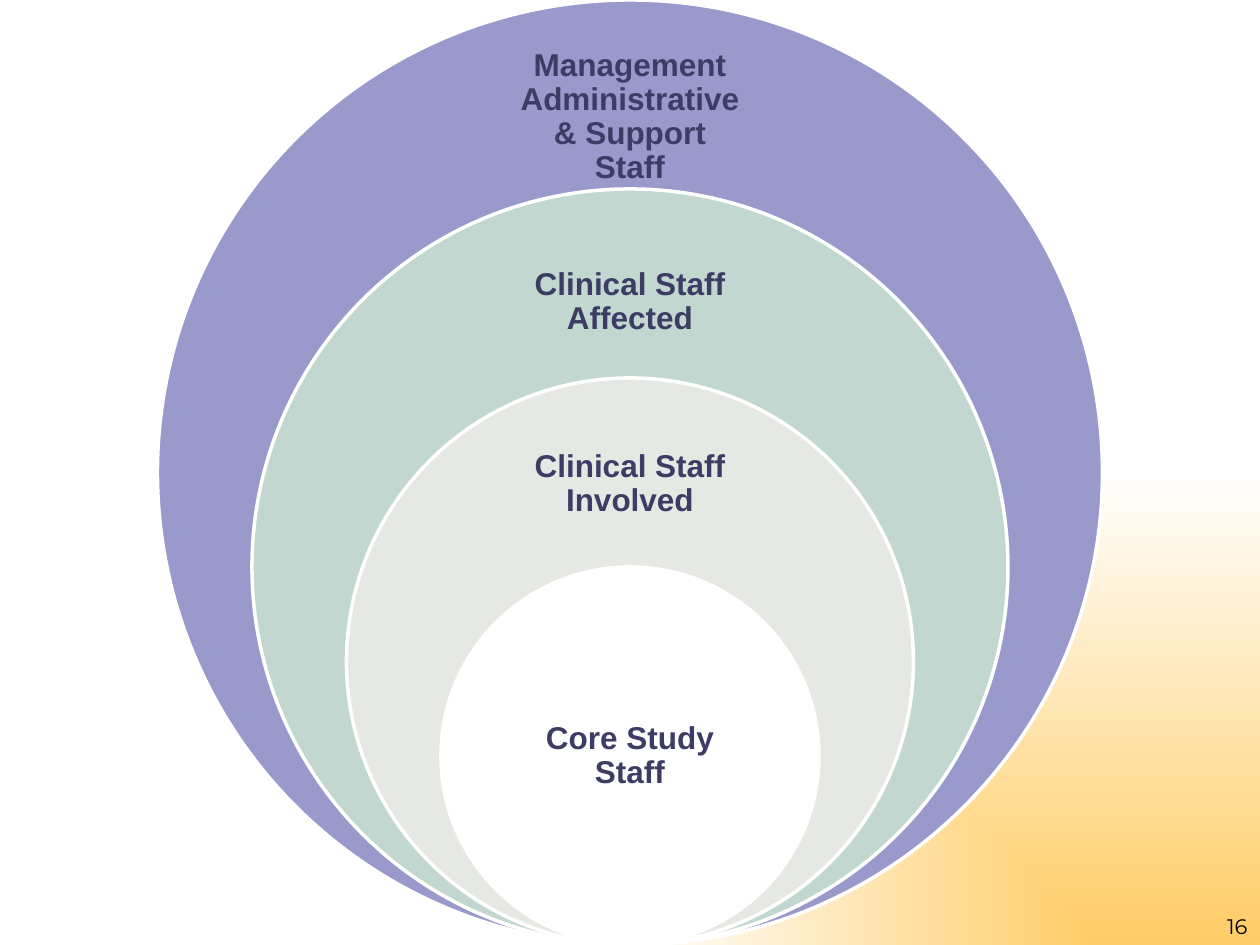
import pptx
import pptx.dml.color
import pptx.enum.shapes
import pptx.enum.text
import pptx.oxml
import pptx.oxml.ns
import pptx.util
from lxml import etree

# Content: rings from the outside in, with label top and height in inches
RINGS = [
    ("Management Administrative & Support Staff", "lilac", 0.37, 1.12),
    ("Clinical Staff Affected", "sage", 1.86, 1.08),
    ("Clinical Staff Involved", "stone", 3.34, 1.01),
    ("Core Study Staff", "white", 5.25, 1.5),
]
PAGE_NUMBER = "16"
COLORS = {"lilac": "9999CC", "sage": "C1D7D0", "stone": "E6E8E3",
          "white": "FFFFFF", "amber": "FFCC66", "ink": "3C3C65",
          "black": "000000"}

# Grid: each ring is a fifth of the slide height smaller than the last
W, H = 10, 7.5
STEP = H / 5
LABEL_W = 2.1
INSET = 0.14

ALIGN = pptx.enum.text.PP_ALIGN
ANCHOR = pptx.enum.text.MSO_ANCHOR


def rgb(name):
    return pptx.dml.color.RGBColor.from_string(COLORS[name])


def inches(*values):
    return [pptx.util.Inches(v) for v in values]


def add_text(s, text, box, size, font, color, align, anchor,
             bold=False, inset=None, spacing=None):
    tf = s.shapes.add_textbox(*inches(*box)).text_frame
    tf.word_wrap = True
    tf.vertical_anchor = anchor
    if inset is not None:
        tf.margin_left = tf.margin_right = pptx.util.Inches(inset)
        tf.margin_top = tf.margin_bottom = pptx.util.Inches(inset)
    p = tf.paragraphs[0]
    p.alignment = align
    p.line_spacing = spacing
    r = p.add_run()
    r.text = text
    r.font.name = font
    r.font.size = pptx.util.Pt(size)
    r.font.bold = bold
    r.font.color.rgb = rgb(color)


def add_background(s):
    fill = s.background.fill
    fill.gradient()
    for stop, name, position in zip(fill.gradient_stops, ("amber", "white"), (0, 1)):
        stop.color.rgb = rgb(name)
        stop.position = position
    # Replace the linear direction with a glow from the bottom right corner
    qn = pptx.oxml.ns.qn
    grad = next(s.element.iter(qn("a:gradFill")))
    for lin in grad.findall(qn("a:lin")):
        grad.remove(lin)
    glow = etree.SubElement(grad, qn("a:path"), {"path": "rect"})
    etree.SubElement(glow, qn("a:fillToRect"), {"l": "100000", "t": "100000"})


def add_ring(s, diameter, color):
    box = ((W - diameter) / 2, H - diameter, diameter, diameter)
    sp = s.shapes.add_shape(pptx.enum.shapes.MSO_SHAPE.OVAL, *inches(*box))
    sp.shadow.inherit = False
    sp.fill.solid()
    sp.fill.fore_color.rgb = rgb(color)
    sp.line.color.rgb = rgb("white")
    sp.line.width = pptx.util.Pt(2)


def main():
    prs = pptx.Presentation()
    prs.slide_width, prs.slide_height = inches(W, H)
    s = prs.slides.add_slide(prs.slide_layouts[6])
    add_background(s)

    # Page number in the bottom right corner
    add_text(s, PAGE_NUMBER, (7.67, 7, 2.33, 0.5), 12, "Montserrat",
             "black", ALIGN.RIGHT, ANCHOR.BOTTOM)

    # Nested rings sharing the bottom edge
    for i, (label, color, top, height) in enumerate(RINGS):
        add_ring(s, H - i * STEP, color)
        add_text(s, label, ((W - LABEL_W) / 2, top, LABEL_W, height), 18,
                 "Arial", "ink", ALIGN.CENTER, ANCHOR.MIDDLE,
                 bold=True, inset=INSET, spacing=0.9)

    prs.save("out.pptx")


if __name__ == "__main__":
    main()
